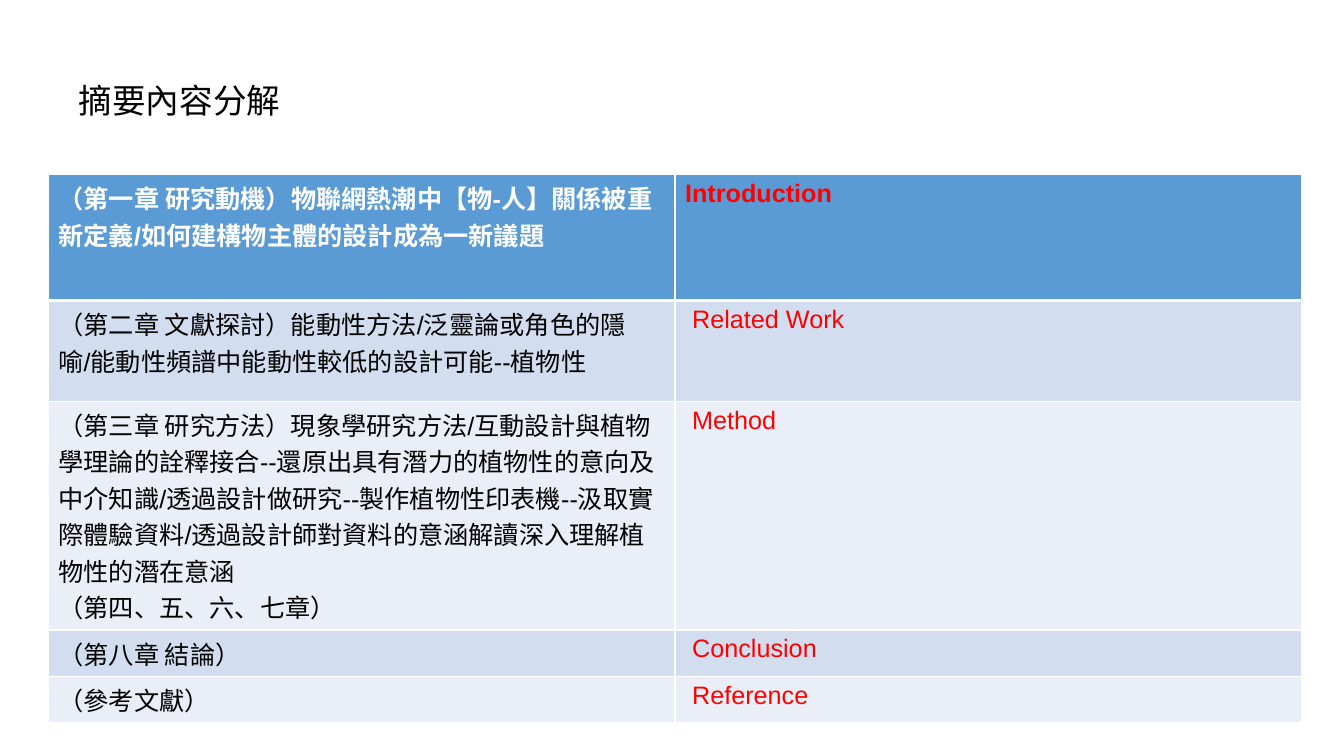
from lxml import etree
from pptx import Presentation
from pptx.dml.color import RGBColor
from pptx.enum.text import MSO_ANCHOR, MSO_AUTO_SIZE, PP_ALIGN
from pptx.oxml.ns import qn
from pptx.util import Inches, Pt

TOP = MSO_ANCHOR.TOP
LEFT = PP_ALIGN.LEFT
FIT_SHAPE = MSO_AUTO_SIZE.SHAPE_TO_FIT_TEXT

COLORS = {
    "header": "5B9BD5",
    "odd": "D2DEEF",
    "even": "EAEFF7",
    "white": "FFFFFF",
    "black": "000000",
    "section": "FF0000",
}
FONT = "Arial"
TITLE = "摘要內容分解"
CHAPTERS = [
    (1.25, ["（第一章 研究動機）物聯網熱潮中【物-人】關係被重新定義/如何建構物主體的設計成為一新議題"],
     "Introduction"),
    (1.0, ["（第二章 文獻探討）能動性方法/泛靈論或角色的隱喻/能動性頻譜中能動性較低的設計可能--植物性"],
     "Related Work"),
    (2.27, ["（第三章 研究方法）現象學研究方法/互動設計與植物學理論的詮釋接合--還原出具有潛力的植物性的意向"
            "及中介知識/透過設計做研究--製作植物性印表機--汲取實際體驗資料/透過設計師對資料的意涵解讀深入"
            "理解植物性的潛在意涵",
            "（第四、五、六、七章）"],
     "Method"),
    (0.46, ["（第八章 結論）"], "Conclusion"),
    (0.46, ["（參考文獻）"], "Reference"),
]
TABLE_LEFT, TABLE_TOP, TABLE_WIDTH = 0.48, 1.73, 12.43
SECTION_INDENT = 0.17


def write(frame, paragraphs, size=18, color="black", bold=False):
    for index, text in enumerate(paragraphs):
        paragraph = frame.paragraphs[0] if index == 0 else frame.add_paragraph()
        paragraph.alignment = LEFT
        run = paragraph.add_run()
        run.text = text
        run.font.name = FONT
        run.font.size = Pt(size)
        run.font.bold = bold
        run.font.color.rgb = RGBColor.from_string(COLORS[color])


def add_borders(cell, widths):
    properties = cell._tc.get_or_add_tcPr()
    for side, width in zip("LRTB", widths):
        line = etree.SubElement(properties, qn(f"a:ln{side}"), w=str(Pt(width)))
        fill = etree.SubElement(line, qn("a:solidFill"))
        etree.SubElement(fill, qn("a:srgbClr"), val=COLORS["white"])


def fill_cell(cell, row, paragraphs, color):
    header = row == 0
    add_borders(cell, (1, 1, 3 if row == 1 else 1, 3 if header else 1))
    cell.fill.solid()
    band = "header" if header else "odd" if row % 2 else "even"
    cell.fill.fore_color.rgb = RGBColor.from_string(COLORS[band])
    write(cell.text_frame, paragraphs, color=color, bold=header)


def main():
    deck = Presentation()
    deck.slide_width, deck.slide_height = Inches(13.33), Inches(7.5)
    slide = deck.slides.add_slide(deck.slide_layouts[5])

    title = slide.shapes.title
    title.left, title.top = Inches(0.68), Inches(0.74)
    title.width, title.height = Inches(7.44), Inches(0.5)
    title.text_frame.word_wrap = True
    title.text_frame.vertical_anchor = TOP
    title.text_frame.auto_size = FIT_SHAPE
    write(title.text_frame, [TITLE], size=24)

    table_height = sum(height for height, _, _ in CHAPTERS)
    table = slide.shapes.add_table(
        len(CHAPTERS), 2, Inches(TABLE_LEFT), Inches(TABLE_TOP),
        Inches(TABLE_WIDTH), Inches(table_height)).table
    for column in table.columns:
        column.width = Inches(TABLE_WIDTH / 2)
    for row, (height, summary, section) in enumerate(CHAPTERS):
        table.rows[row].height = Inches(height)
        summary_cell, section_cell = table.cell(row, 0), table.cell(row, 1)
        fill_cell(summary_cell, row, summary, "black" if row else "white")
        fill_cell(section_cell, row, [section], "section")
        if row:
            section_cell.margin_left = Inches(SECTION_INDENT)

    deck.save("out.pptx")


if __name__ == "__main__":
    main()
